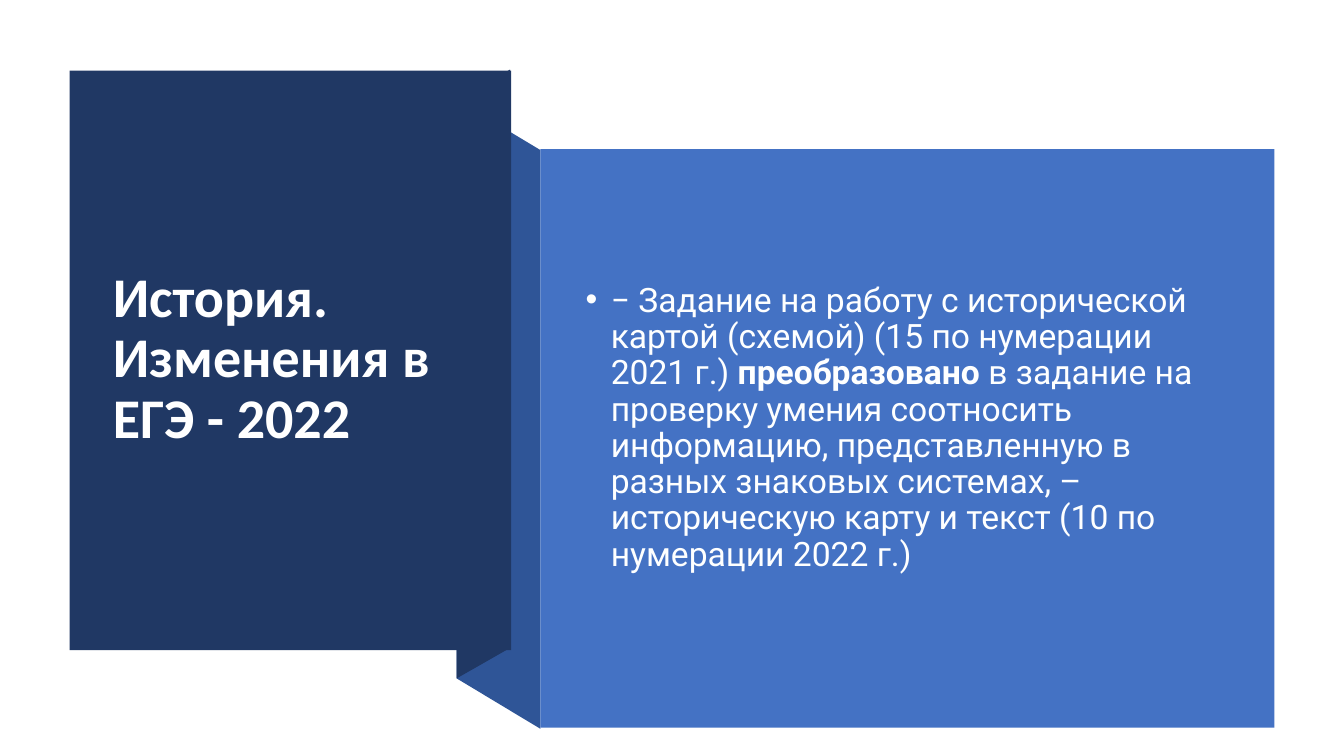
from lxml.etree import SubElement
from pptx import Presentation
from pptx.dml.color import RGBColor as Rgb
from pptx.enum.shapes import MSO_SHAPE as Kind
from pptx.enum.text import MSO_ANCHOR as Anchor
from pptx.oxml.ns import qn
from pptx.util import Inches, Pt

HUES = {"navy": "203864", "fold": "2F5597", "blue": "4472C4",
        "white": "FFFFFF", "body": "FEFFFF"}
TITLE = "История. Изменения в ЕГЭ - 2022"
BODY = [
    ("− Задание на работу с исторической картой (схемой) (15 по нумерации 2021 г.) ", False),
    ("преобразовано", True),
    (" в задание на проверку умения соотносить информацию, представленную в "
     "разных знаковых системах, – историческую карту и текст "
     "(10 по нумерации 2022 г.)", False),
]


def paint(shape, hue):
    shape.shadow.inherit = False
    shape.fill.solid()
    shape.fill.fore_color.rgb = Rgb.from_string(HUES[hue])
    shape.line.fill.background()


def panel(slide, box, hue):
    paint(slide.shapes.add_shape(Kind.RECTANGLE, *map(Inches, box)), hue)


def fold(slide, box, left, right, hue):
    x, y, w, h = box
    spots = [(x + w, y + right * h), (x + w, y + (right + 1 - left) * h)]
    if left > right:
        spots = [(x + w, y), (x + w, y + (1 - left) * h),
                 (x, y + h), (x, y + left * h)]
    else:
        spots = [(x + w, y + h), (x, y + (1 - right) * h),
                 (x, y), (x + w, y + right * h)]
    spots = [(Inches(a), Inches(b)) for a, b in spots]
    build = slide.shapes.build_freeform(*spots[0])
    build.add_line_segments(spots[1:], close=True)
    paint(build.convert_to_shape(), hue)


def write(slide, box, inset, runs, font, size, hue):
    x, y, w, h = box
    left, top, right, low = inset
    area = (x + left, y + top, w - left - right, h - top - low)
    frame = slide.shapes.add_textbox(*map(Inches, area)).text_frame
    frame.word_wrap = True
    frame.vertical_anchor = Anchor.MIDDLE
    para = frame.paragraphs[0]
    para.line_spacing = 0.9
    para.font.name = font
    para.font.size = Pt(size)
    para.font.color.rgb = Rgb.from_string(HUES[hue])
    for text, bold in runs:
        run = para.add_run()
        run.text = text
        run.font.bold = bold
    return para


def title(slide, box):
    panel(slide, box, "navy")
    write(slide, box, (0.33, 0.37, 0.33, 0.39), [(TITLE, True)],
          "Calibri", 40, "white")


def body(slide, box):
    panel(slide, box, "blue")
    para = write(slide, box, (0.35, 0.4, 0.42, 0.6), BODY,
                 "Roboto", 24, "body")
    para.space_before = Pt(10)
    props = para._p.get_or_add_pPr()
    props.set("marL", str(Inches(0.25)))
    props.set("indent", str(-Inches(0.25)))
    mark = SubElement(props, qn("a:buFont"))
    mark.set("typeface", "Arial")
    props.insert_element_before(mark, "a:defRPr")
    dot = SubElement(props, qn("a:buChar"))
    dot.set("char", "•")
    props.insert_element_before(dot, "a:defRPr")


def main():
    deck = Presentation()
    deck.slide_width = Inches(13.33)
    deck.slide_height = Inches(7.5)
    slide = deck.slides.add_slide(deck.slide_layouts[6])
    fold(slide, (4.53, 0.99, 0.83, 6.24), 0, 0.08, "fold")
    fold(slide, (4.53, 0.69, 0.53, 6.04), 0.05, 0, "navy")
    title(slide, (0.69, 0.7, 4.38, 5.75))
    body(slide, (5.36, 1.48, 7.28, 5.74))
    deck.save("out.pptx")


if __name__ == "__main__":
    main()
